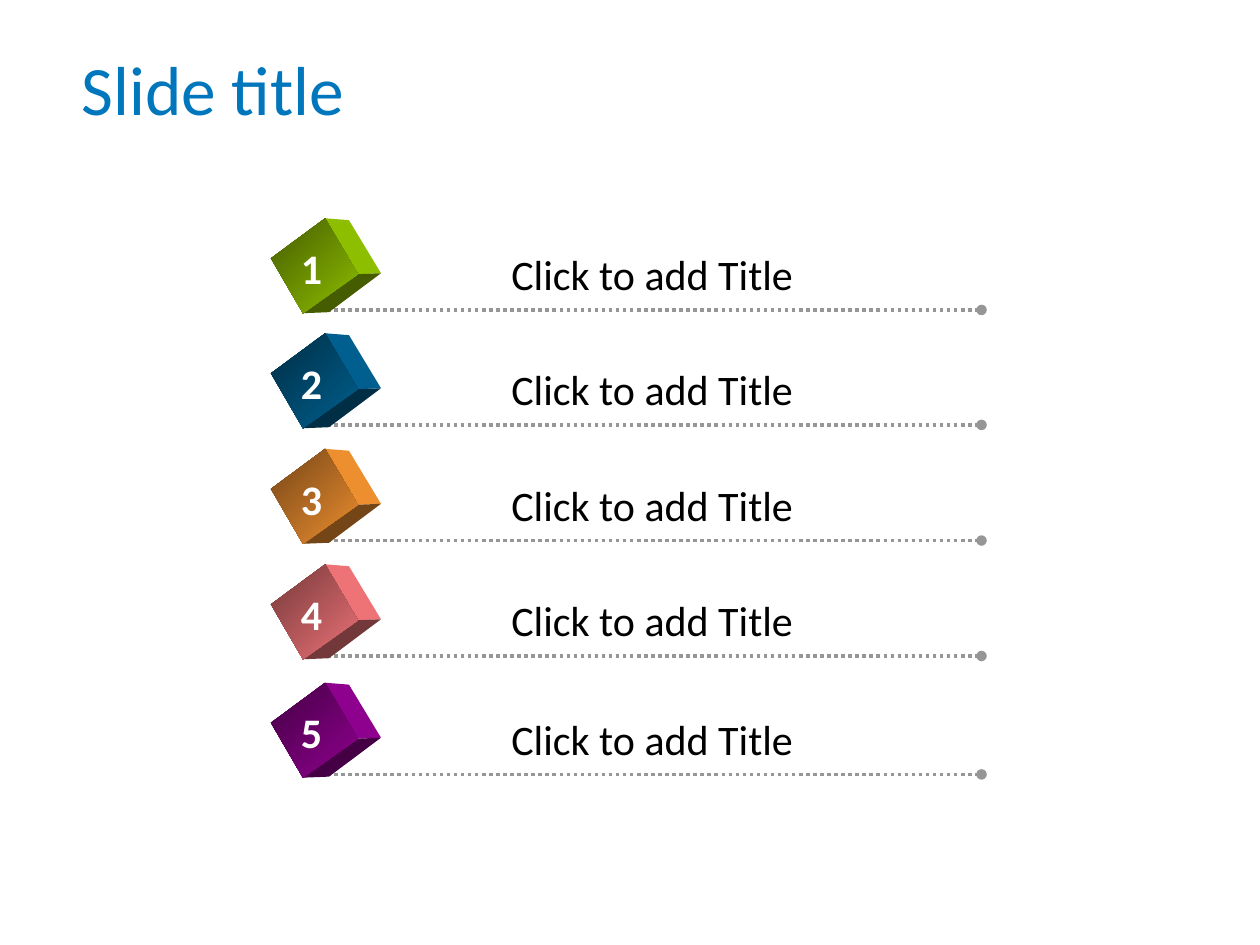
from dataclasses import dataclass

from lxml.etree import SubElement
from pptx import Presentation
from pptx.dml.color import RGBColor as Color
from pptx.enum.dml import MSO_LINE_DASH_STYLE as Dash
from pptx.enum.shapes import MSO_CONNECTOR as Connector
from pptx.enum.text import MSO_ANCHOR as Anchor, MSO_AUTO_SIZE as AutoSize
from pptx.oxml.ns import qn
from pptx.util import Inches, Pt


@dataclass(frozen=True)
class Theme:
    font: str = "Calibri"
    title: str = "0076BC"
    text: str = "000000"
    number: str = "FFFFFF"
    rule: str = "969696"
    cubes: tuple = ("99CC00", "006699", "FF9933", "FF7C80", "990099")
    title_size: float = 39.6
    text_size: float = 24
    light: float = 0.93
    dark: float = 0.45


theme = Theme()
presentation = Presentation()
presentation.slide_width, presentation.slide_height = Inches(10), Inches(7.5)
slide = presentation.slides.add_slide(presentation.slide_layouts[6])

# One column and one row are a hundredth of the slide
column = presentation.slide_width / 100
row = presentation.slide_height / 100


def add_text(shapes, box, text, size, color, bold=False, wrap=False):
    left, top, width, height = box
    shape = shapes.add_textbox(int(left * column), int(top * row),
                               int(width * column), int(height * row))
    frame = shape.text_frame
    frame.word_wrap = wrap
    frame.auto_size = AutoSize.NONE if wrap else AutoSize.SHAPE_TO_FIT_TEXT
    run = frame.paragraphs[0].add_run()
    run.text = text
    run.font.name, run.font.size, run.font.bold = theme.font, Pt(size), bold
    run.font.color.rgb = Color.from_string(color)
    return frame


def shade(color, factor):
    return Color(*(round(part * factor) for part in Color.from_string(color)))


# Title
title = add_text(slide.shapes, (5.5, 4.93, 87.5, 9.87), "Slide title",
                 theme.title_size, theme.title, wrap=True)
title.vertical_anchor = Anchor.MIDDLE
title.paragraphs[0].line_spacing = 0.9

# Cube corners: column, and rows from the dotted line
left, top, middle, bottom = (21.5, -5.47), (25.8, -9.7), (28.41, -3.78), (24.05, 0.35)
back_top, back_right, back_bottom = (27.7, -9.5), (30.24, -3.88), (26.11, 0.24)
faces = {
    "side": (top, back_top, back_right, middle),
    "base": (bottom, middle, back_right, back_bottom),
    "front": (left, top, middle, bottom),
}

line_rows = (32.8, 44.97, 57.2, 69.42, 81.95)
for number, (line_row, color) in enumerate(zip(line_rows, theme.cubes), 1):
    shapes = slide.shapes.add_group_shape().shapes

    # Dotted line with a round end
    y = int(line_row * row)
    connector = shapes.add_connector(Connector.STRAIGHT, int(25.4 * column), y,
                                     int(77.9 * column), y)
    connector.line.color.rgb = Color.from_string(theme.rule)
    connector.line.width = Pt(2)
    connector.line.dash_style = Dash.ROUND_DOT
    SubElement(connector.line._get_or_add_ln(), qn("a:tailEnd"), type="oval")
    SubElement(connector._element.spPr, qn("a:effectLst"))

    # Cube
    light, dark = shade(color, theme.light), shade(color, theme.dark)
    for face, corners in faces.items():
        points = [(x * column, (line_row + offset) * row) for x, offset in corners]
        builder = shapes.build_freeform(*points[0])
        builder.add_line_segments(points[1:], close=True)
        shape = builder.convert_to_shape()
        shape.shadow.inherit = False
        shape.line.fill.background()
        if face == "front":
            shape.fill.gradient()
            shape.fill.gradient_angle = 315
            for stop, stop_color in zip(shape.fill.gradient_stops, (dark, light)):
                stop.color.rgb = stop_color
        else:
            shape.fill.solid()
            shape.fill.fore_color.rgb = light if face == "side" else dark

    # Label and number
    add_text(shapes, (39.6, line_row - 7.15, 24.6, 6.8), "Click to add Title",
             theme.text_size, theme.text)
    add_text(shapes, (22.9, line_row - 7.8, 3.7, 6.8), str(number),
             theme.text_size, theme.number, bold=True)

presentation.save("out.pptx")
